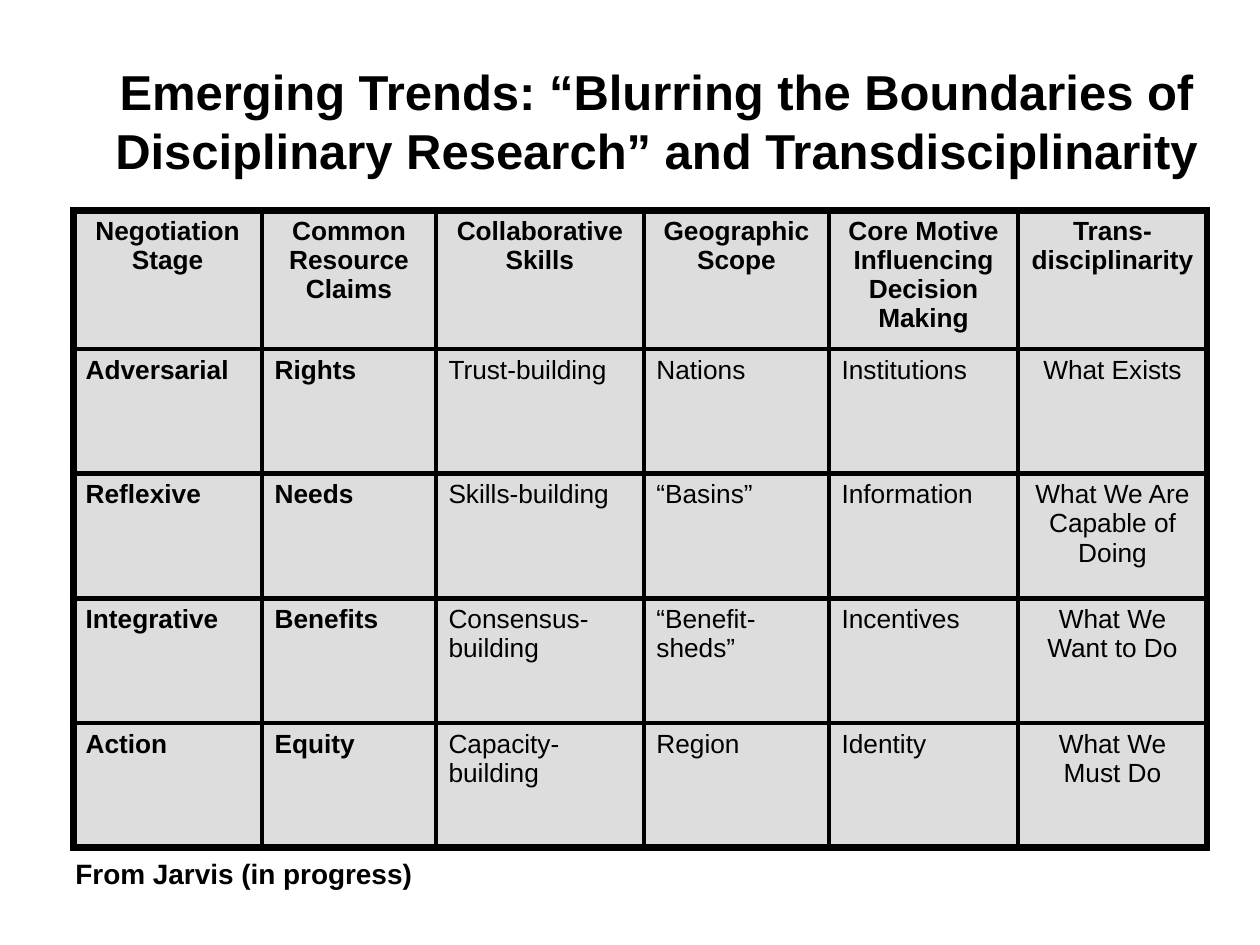
from pptx import Presentation
from pptx.dml.color import RGBColor
from pptx.enum.text import MSO_ANCHOR as Anchor, MSO_AUTO_SIZE as AutoSize, PP_ALIGN as Align
from pptx.oxml import parse_xml
from pptx.oxml.ns import nsdecls
from pptx.util import Inches, Pt


def rgb(color):
    return RGBColor.from_string(color)


def write(frame, text, size, bold, align):
    paragraph = frame.paragraphs[0]
    paragraph.alignment = align
    run = paragraph.add_run()
    run.text = text
    run.font.name = "Arial"
    run.font.size = Pt(size)
    run.font.bold = bold
    run.font.color.rgb = rgb("000000")


STAGES = [
    ["Negotiation Stage", "Common Resource Claims", "Collaborative Skills",
     "Geographic Scope", "Core Motive Influencing Decision Making", "Trans-disciplinarity"],
    ["Adversarial", "Rights", "Trust-building", "Nations", "Institutions", "What Exists"],
    ["Reflexive", "Needs", "Skills-building", "“Basins”", "Information",
     "What We Are Capable of Doing"],
    ["Integrative", "Benefits", "Consensus-building", "“Benefit-sheds”", "Incentives",
     "What We Want to Do"],
    ["Action", "Equity", "Capacity-building", "Region", "Identity", "What We Must Do"],
]
COLUMN_WIDTHS = [1.5, 1.38, 1.65, 1.47, 1.5, 1.5]
ROW_HEIGHTS = [1.1] + [0.99] * 4
LAST_ROW = len(ROW_HEIGHTS) - 1
LAST_COLUMN = len(COLUMN_WIDTHS) - 1
INNER, OUTER = Pt(3), Pt(4.5)

prs = Presentation()
prs.slide_width = Inches(10)
prs.slide_height = Inches(7.5)
slide = prs.slides.add_slide(prs.slide_layouts[5])

title = slide.shapes.title
title.left, title.top = Inches(0.75), Inches(0.33)
title.width, title.height = Inches(8.92), Inches(1.25)
title.text_frame.auto_size = AutoSize.NONE
title.text_frame.vertical_anchor = Anchor.MIDDLE
write(title.text_frame,
      "Emerging Trends: “Blurring the Boundaries of Disciplinary Research” and Transdisciplinarity",
      28, True, Align.CENTER)

trends = slide.shapes.add_table(
    len(ROW_HEIGHTS), len(COLUMN_WIDTHS),
    Inches(0.58), Inches(1.67), Inches(9), Inches(5.06)).table
trends.first_row = False
trends.horz_banding = False
for column, width in zip(trends.columns, COLUMN_WIDTHS):
    column.width = Inches(width)
for row, height in zip(trends.rows, ROW_HEIGHTS):
    row.height = Inches(height)

for r, stage in enumerate(STAGES):
    for c, text in enumerate(stage):
        cell = trends.cell(r, c)
        centred = r == 0 or c == LAST_COLUMN
        write(cell.text_frame, text, 15, r == 0 or c < 2,
              Align.CENTER if centred else Align.LEFT)
        edges = {"L": c == 0, "R": c == LAST_COLUMN, "T": r == 0, "B": r == LAST_ROW}
        for side, is_outer in edges.items():
            cell._tc.get_or_add_tcPr().append(parse_xml(
                f'<a:ln{side} {nsdecls("a")} w="{OUTER if is_outer else INNER}">'
                f'<a:solidFill><a:srgbClr val="000000"/></a:solidFill></a:ln{side}>'))
        cell.fill.solid()
        cell.fill.fore_color.rgb = rgb("DDDDDD")

credit = slide.shapes.add_textbox(Inches(0.5), Inches(6.75), Inches(2.91), Inches(0.37))
credit.text_frame.word_wrap = False
credit.text_frame.auto_size = AutoSize.SHAPE_TO_FIT_TEXT
write(credit.text_frame, "From Jarvis (in progress)", 16, True, Align.LEFT)

prs.save("out.pptx")
